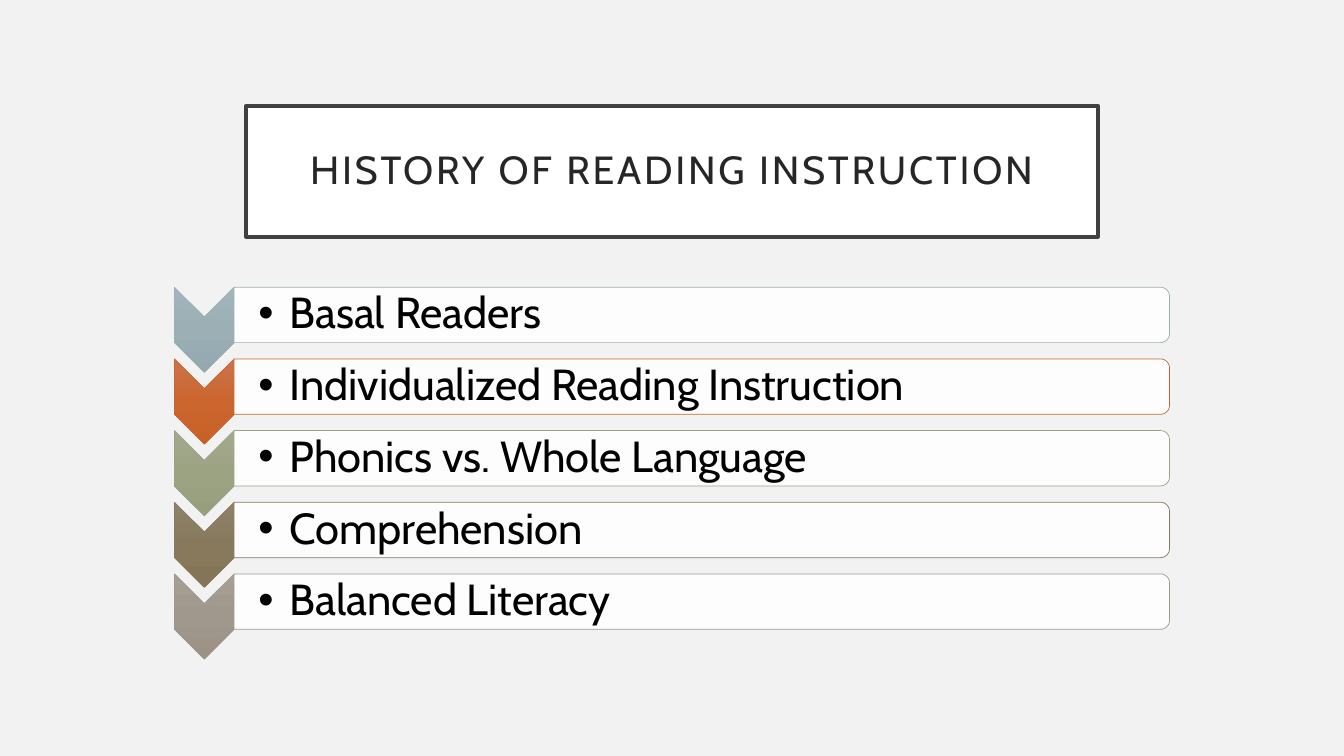
from copy import deepcopy
from math import cos, pi, sin

from lxml import etree
from pptx import Presentation
from pptx import util as u
from pptx.dml.color import RGBColor
from pptx.enum import text
from pptx.oxml.ns import qn

FONT = "Cabin"
ERAS = [
    ("Basal Readers", "9BAFB5", ("A3B5BB", "9BAFB5", "93A9AF")),
    ("Individualized Reading Instruction", "C96731", ("CC734B", "CB662F", "C86128")),
    ("Phonics vs. Whole Language", "9CA383", ("A3A98C", "9CA383", "979E7C")),
    ("Comprehension", "87795D", ("8F8269", "88795C", "847557")),
    ("Balanced Literacy", "A0988C", ("A79F95", "A0988C", "9B9285")),
]


def rgb(value):
    return RGBColor.from_string(value)


def write(sp, content, size, color, align, insets, spacing=0, indent=0):
    tf = sp.text_frame
    tf.word_wrap = True
    tf.auto_size = text.MSO_AUTO_SIZE.NONE
    tf.vertical_anchor = text.MSO_ANCHOR.MIDDLE
    tf.margin_left, tf.margin_top, tf.margin_right, tf.margin_bottom = map(u.Inches, insets)
    p = tf.paragraphs[0]
    p.alignment = align
    p.line_spacing = 0.9
    r = p.add_run()
    r.text = content
    r.font.name = FONT
    r.font.size = u.Pt(size)
    r.font.color.rgb = rgb(color)
    if spacing:
        r.font._element.set("spc", str(spacing * 100))
    if indent:
        p.level = 1
        pPr = p._p.get_or_add_pPr()
        pPr.set("marL", str(u.Inches(indent)))
        pPr.set("indent", str(-u.Inches(indent)))
        etree.SubElement(pPr, qn("a:buFont")).set("typeface", "Arial")
        etree.SubElement(pPr, qn("a:buChar")).set("char", "•")


class Deck:
    def __init__(self):
        self.prs = Presentation()
        self.prs.slide_width = u.Inches(13.33)
        self.prs.slide_height = u.Inches(7.5)
        self.s = self.prs.slides.add_slide(self.prs.slide_layouts[5])
        self.s.background.fill.solid()
        self.s.background.fill.fore_color.rgb = rgb("F2F2F2")

    def at(self, x, y):
        return round(self.prs.slide_width * x / 100), round(self.prs.slide_height * y / 100)

    def paint(self, sp, fill, line, width):
        sp.fill.solid()
        sp.fill.fore_color.rgb = rgb(fill)
        sp.line.color.rgb = rgb(line)
        sp.line.width = u.Pt(width)

    def title(self, content, x, y, w, h):
        sp = self.s.shapes.title
        sp.left, sp.top = self.at(x, y)
        sp.width, sp.height = self.at(w, h)
        self.paint(sp, "FFFFFF", "404040", 2.5)
        write(sp, content, 28, "262626", text.PP_ALIGN.CENTER, (0.2,) * 4, spacing=2)

    def outline(self, points, fill, line):
        start, *rest = [self.at(x, y) for x, y in points]
        builder = self.s.shapes.build_freeform(*start)
        builder.add_line_segments(rest)
        sp = builder.convert_to_shape()
        sp.shadow.inherit = False
        self.paint(sp, fill, line, 0.5)
        return sp

    def chevron(self, x, y, w, h, tip, colors, line):
        mid, right = x + w / 2, x + w
        points = [(x, y), (mid, y + tip), (right, y), (right, y + h),
                  (mid, y + h + tip), (x, y + h)]
        sp = self.outline(points, colors[1], line)
        sp.fill.gradient()
        sp.fill.gradient_angle = 270
        stops = sp._element.spPr.find(qn("a:gradFill")).find(qn("a:gsLst"))
        stops.insert(1, deepcopy(stops[0]))
        for stop, color, position in zip(sp.fill.gradient_stops, colors, (0, 0.5, 1)):
            stop.color.rgb = rgb(color)
            stop.position = position

    def bar(self, content, x, y, w, h, line):
        rx, ry = 0.68, 1.2
        right, bottom = x + w, y + h
        turns = [i * pi / 16 for i in range(9)]
        top_arc = [(right - rx + rx * sin(t), y + ry - ry * cos(t)) for t in turns]
        low_arc = [(right - rx + rx * cos(t), bottom - ry + ry * sin(t)) for t in turns]
        sp = self.outline([(x, y), *top_arc, *low_arc, (x, bottom)], "FFFFFF", line)
        color = sp._element.spPr.find(qn("a:solidFill"))[0]
        etree.SubElement(color, qn("a:alpha")).set("val", "90000")
        write(sp, content, 31, "000000", text.PP_ALIGN.LEFT,
              (0.24, 0.05, 0.05, 0.05), indent=0.31)


def main():
    deck = Deck()
    deck.title("HISTORY OF READING INSTRUCTION", 18.3, 14, 63.4, 17.33)
    left, top, pitch, height = 12.98, 38, 9.48, 7.33
    arrow = 4.44
    for i, (name, line, colors) in enumerate(ERAS):
        y = top + i * pitch
        deck.chevron(left, y, arrow, height, 3.93, colors, line)
        deck.bar(name, left + arrow, y, 69.6, height, line)
    deck.prs.save("out.pptx")


if __name__ == "__main__":
    main()
